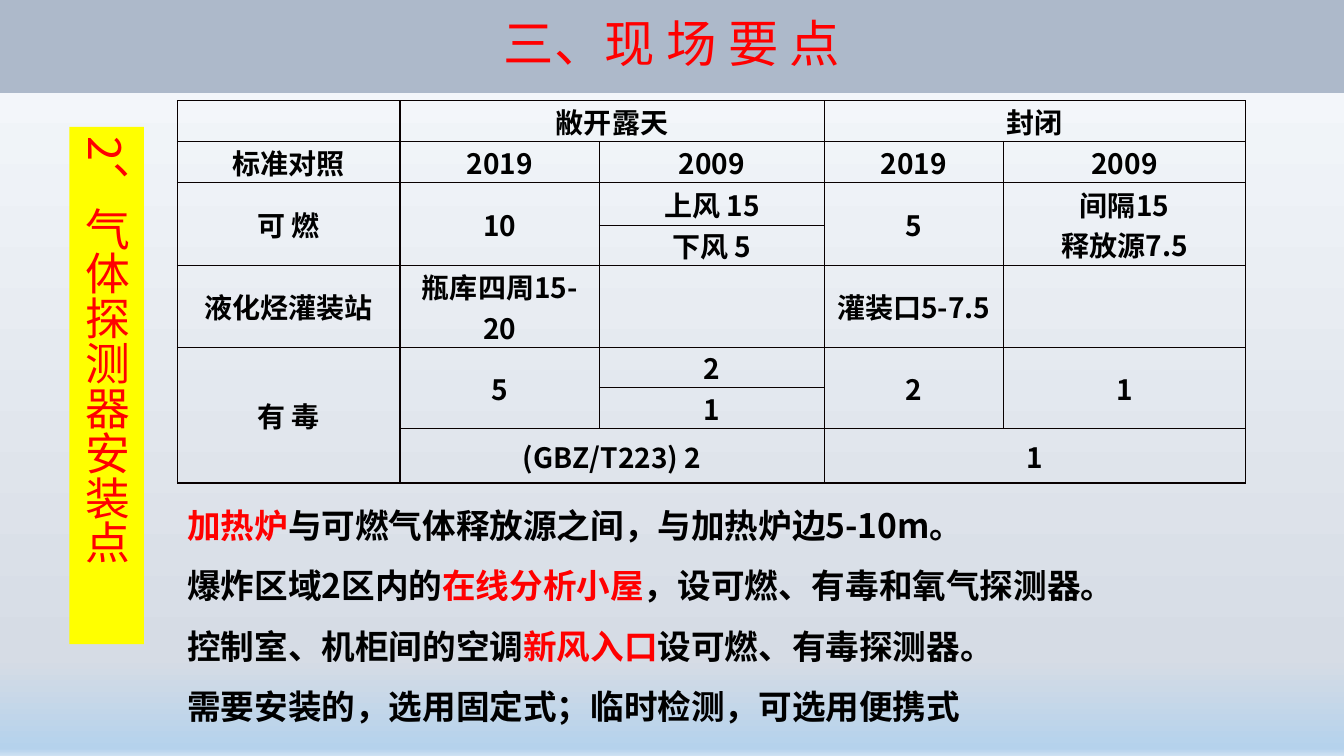
from lxml import etree
from pptx import Presentation
from pptx.dml.color import RGBColor
from pptx.enum import shapes, text
from pptx.oxml import ns
from pptx.util import Cm, Pt

RED = RGBColor(0xFF, 0, 0)
BLACK = RGBColor(0, 0, 0)
YELLOW = RGBColor(0xFF, 0xFF, 0)
BANNER_BLUE = RGBColor(0xAD, 0xB9, 0xCA)
BORDER = RGBColor(0x08, 0, 0)
BACKGROUND_STOPS = [
    (0, RGBColor(0xF7, 0xFA, 0xFD)),
    (87, RGBColor(0xD6, 0xDC, 0xE5)),
    (99, RGBColor(0xB5, 0xD2, 0xEC)),
    (100, RGBColor(0xCE, 0xE1, 0xF2)),
]
FONT = "Noto Sans CJK SC"
VERTICAL_FONT = "Noto Sans CJK JP"

COLUMN_WIDTHS = [5.61, 5.03, 5.66, 4.52, 6.1]
ROW_HEIGHTS = [0.97, 1.04, 1.07, 0.97, 1.96, 0.97, 0.97, 1.37]
CELL_TEXTS = [
    ["", "敝开露天", "", "封闭", ""],
    ["标准对照", "2019", "2009", "2019", "2009"],
    ["可 燃", "10", "上风 15", "5", "间隔15\n释放源7.5"],
    ["", "", "下风 5", "", ""],
    ["液化烃灌装站", "瓶库四周15-20", "", "灌装口5-7.5", ""],
    ["有 毒", "5", "2", "2", "1"],
    ["", "", "1", "", ""],
    ["", "(GBZ/T223) 2", "", "1", ""],
]
# First row, first column, last row, last column
MERGES = [
    (0, 1, 0, 2), (0, 3, 0, 4),
    (2, 0, 3, 0), (2, 1, 3, 1), (2, 3, 3, 3), (2, 4, 3, 4),
    (5, 0, 7, 0), (5, 1, 6, 1), (5, 3, 6, 3), (5, 4, 6, 4),
    (7, 1, 7, 2), (7, 3, 7, 4),
]
NOTES = [
    [("加热炉", RED), ("与可燃气体释放源之间，与加热炉边5-10m。", BLACK)],
    [("爆炸区域2区内的", BLACK), ("在线分析小屋", RED),
     ("，设可燃、有毒和氧气探测器。", BLACK)],
    [("控制室、机柜间的空调", BLACK), ("新风入口", RED),
     ("设可燃、有毒探测器。", BLACK)],
    [("需要安装的，选用固定式；临时检测，可选用便携式", BLACK)],
]


def write_paragraphs(frame, paragraphs, size, font=FONT, bold=False,
                     align=text.PP_ALIGN.LEFT, spacing=None):
    """Fill a text frame; each paragraph is a list of (words, colour) runs."""
    for index, runs in enumerate(paragraphs):
        paragraph = frame.add_paragraph() if index else frame.paragraphs[0]
        paragraph.alignment = align
        paragraph.line_spacing = spacing
        for words, color in runs:
            run = paragraph.add_run()
            run.text = words
            run.font.size = Pt(size)
            run.font.bold = bold
            run.font.color.rgb = color
            run.font.name = font
            east_asian = etree.SubElement(run.font._element, ns.qn("a:ea"))
            east_asian.set("typeface", font)


def set_background(slide):
    fill = slide.background.fill
    fill.gradient()
    fill.gradient_angle = 270
    stops = slide._element.find(".//" + ns.qn("a:gsLst"))
    for stop in list(stops):
        stops.remove(stop)
    for percent, color in BACKGROUND_STOPS:
        stop = etree.SubElement(stops, ns.qn("a:gs"), pos=str(percent * 1000))
        etree.SubElement(stop, ns.qn("a:srgbClr"), val=str(color))


def add_block(slide, left, top, width, height, color):
    block = slide.shapes.add_shape(shapes.MSO_SHAPE.RECTANGLE, Cm(left),
                                   Cm(top), Cm(width), Cm(height))
    block.shadow.inherit = False
    block.fill.solid()
    block.fill.fore_color.rgb = color
    block.line.fill.background()
    block.text_frame.word_wrap = True
    block.text_frame.vertical_anchor = text.MSO_ANCHOR.MIDDLE
    return block


def add_borders(cell):
    properties = cell._tc.get_or_add_tcPr()
    for index, side in enumerate(("lnL", "lnR", "lnT", "lnB")):
        line = etree.Element(ns.qn("a:" + side), w=str(Pt(1)))
        fill = etree.SubElement(line, ns.qn("a:solidFill"))
        etree.SubElement(fill, ns.qn("a:srgbClr"), val=str(BORDER))
        properties.insert(index, line)


def add_standards_table(slide):
    table = slide.shapes.add_table(
        len(ROW_HEIGHTS), len(COLUMN_WIDTHS), Cm(4.47), Cm(2.54),
        Cm(sum(COLUMN_WIDTHS)), Cm(sum(ROW_HEIGHTS))).table
    table.first_row = table.horz_banding = False
    for column, width in zip(table.columns, COLUMN_WIDTHS):
        column.width = Cm(width)
    for row, height, words in zip(table.rows, ROW_HEIGHTS, CELL_TEXTS):
        row.height = Cm(height)
        for cell, content in zip(row.cells, words):
            cell.fill.background()
            add_borders(cell)
            cell.vertical_anchor = text.MSO_ANCHOR.MIDDLE
            cell.margin_left = cell.margin_right = Cm(0.18)
            cell.margin_top = cell.margin_bottom = 0
            if content:
                lines = [[(line, BLACK)] for line in content.split("\n")]
                write_paragraphs(cell.text_frame, lines, 20, bold=True,
                                 align=text.PP_ALIGN.CENTER)
    for top, left, bottom, right in MERGES:
        table.cell(top, left).merge(table.cell(bottom, right))


def add_vertical_heading(slide):
    heading = add_block(slide, 1.75, 3.2, 1.88, 13.03, YELLOW)
    heading.text_frame._txBody.bodyPr.set("vert", "eaVert")
    write_paragraphs(heading.text_frame, [[("2、气体探测器安装点", RED)]], 32,
                     font=VERTICAL_FONT)


def add_notes(slide):
    box = slide.shapes.add_textbox(Cm(4.47), Cm(12.09), Cm(26.92), Cm(6.4))
    box.text_frame.word_wrap = True
    write_paragraphs(box.text_frame, NOTES, 24, bold=True, spacing=1.5)


def main():
    presentation = Presentation()
    presentation.slide_width = Cm(33.87)
    presentation.slide_height = Cm(19.05)
    slide = presentation.slides.add_slide(presentation.slide_layouts[6])
    set_background(slide)
    banner = add_block(slide, 0, 0, 33.87, 2.34, BANNER_BLUE)
    write_paragraphs(banner.text_frame, [[("三、现 场 要 点", RED)]], 36,
                     align=text.PP_ALIGN.CENTER, spacing=0.9)
    add_standards_table(slide)
    add_vertical_heading(slide)
    add_notes(slide)
    presentation.save("out.pptx")


if __name__ == "__main__":
    main()
